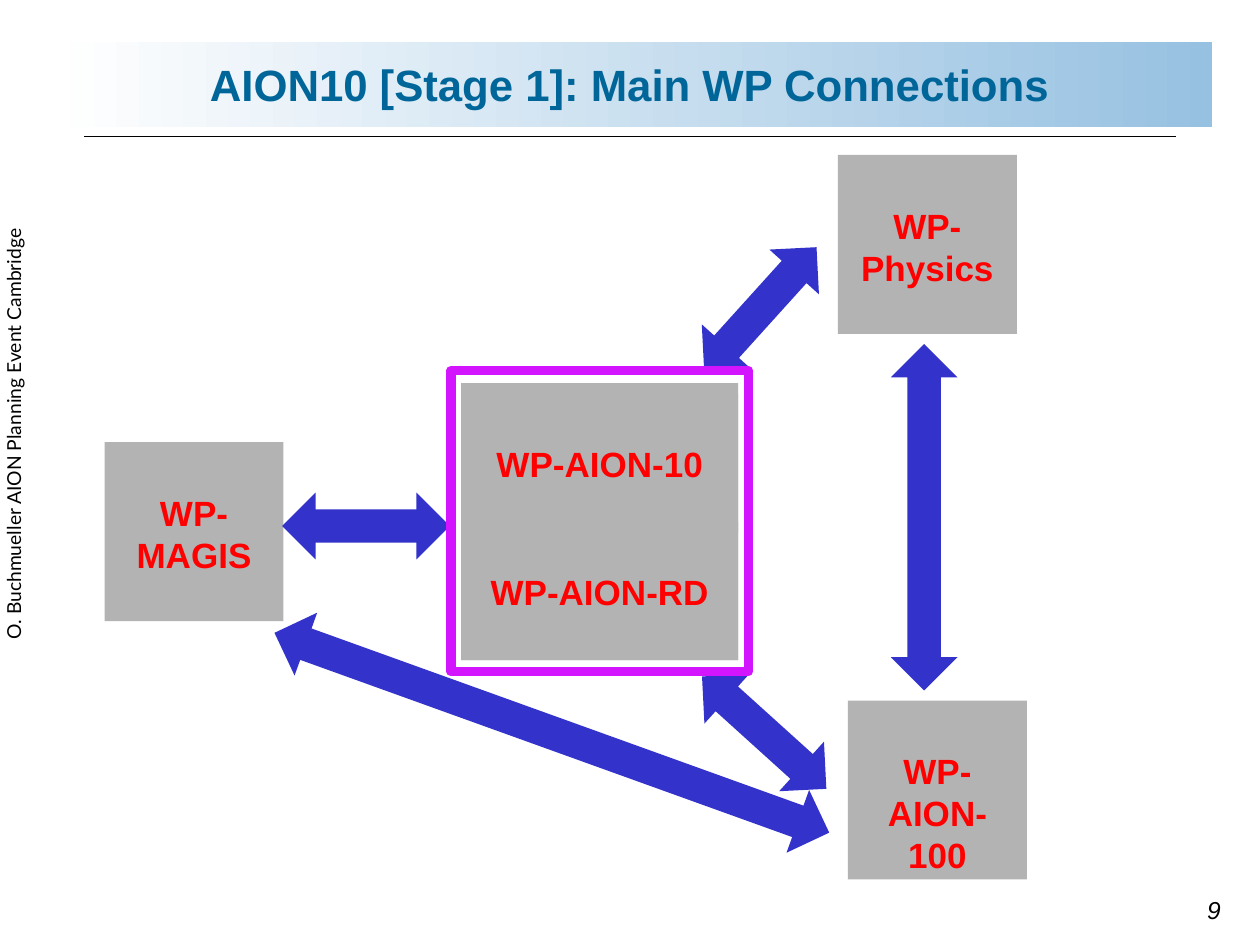
from dataclasses import dataclass

from lxml.etree import SubElement
from pptx import Presentation
from pptx.dml.color import RGBColor
from pptx.enum.shapes import MSO_CONNECTOR, MSO_SHAPE
from pptx.enum.text import MSO_ANCHOR, MSO_AUTO_SIZE, PP_ALIGN
from pptx.oxml.ns import qn
from pptx.util import Inches, Pt


@dataclass(frozen=True)
class Theme:
    font: str = "Arial"
    side_font: str = "Lato"
    title_color: str = "006699"
    label_color: str = "FF0000"
    text_color: str = "000000"
    bar_start: str = "FFFFFF"
    bar_end: str = "97C1E1"
    box_fill: str = "B3B3B3"
    arrow_fill: str = "3333CC"
    frame_line: str = "D315FF"
    title_size: float = 25
    label_size: float = 20
    number_size: float = 14
    side_size: float = 11


THEME = Theme()
COLUMNS, ROWS = 100, 75  # square grid cells over the whole slide
SLIDE_WIDTH, SLIDE_HEIGHT = Inches(10), Inches(7.5)
SQUARE = 14.2            # side of an outer work package
CORE = 22                # side of the central work package
ARROW_HEIGHT = 5.3

# Left column, top row and lines of each outer work package
PACKAGES = [
    (66.5, 12.3, ["WP-Physics"]),
    (67.3, 55.6, ["WP-AION-", "100"]),
    (8.3, 35.1, ["WP-MAGIS"]),
]
# Centre column, centre row, length and rotation of each arrow
ARROWS = [
    (60.35, 24.55, 13.3, 312.1),
    (60.65, 58.15, 13.3, 42.1),
    (29.05, 41.75, 13.3, 0),
    (73.35, 41.05, 27.5, 270),
    (43.8, 58.15, 46.8, 199.8),
]


def grid(left, top, width, height):
    """Turn columns and rows into slide lengths."""
    column, row = SLIDE_WIDTH / COLUMNS, SLIDE_HEIGHT / ROWS
    return (round(left * column), round(top * row),
            round(width * column), round(height * row))


def apply(target, values):
    for name, value in values.items():
        setattr(target, name, value)


def write(box, lines, font, color, align=PP_ALIGN.LEFT,
          anchor=MSO_ANCHOR.TOP, insets=(0.09, 0.04, 0.09, 0.04)):
    """Fill a box with one paragraph per line; insets run left, top, right, bottom."""
    frame = box.text_frame
    apply(frame, {"word_wrap": True, "auto_size": MSO_AUTO_SIZE.NONE,
                  "vertical_anchor": anchor})
    sides = ("margin_left", "margin_top", "margin_right", "margin_bottom")
    apply(frame, dict(zip(sides, map(Inches, insets))))
    for index, line in enumerate(lines):
        para = frame.paragraphs[0] if index == 0 else frame.add_paragraph()
        para.alignment = align
        span = para.add_run()
        span.text = line
        apply(span.font, font)
        span.font.color.rgb = RGBColor.from_string(color)


def add_block(page, kind, place, fill=None):
    block = page.shapes.add_shape(kind, *grid(*place))
    block.shadow.inherit = False
    block.line.fill.background()
    if fill:
        block.fill.solid()
        block.fill.fore_color.rgb = RGBColor.from_string(fill)
    else:
        block.fill.background()
    return block


def add_package(page, place, lines):
    box = add_block(page, MSO_SHAPE.RECTANGLE, place, THEME.box_fill)
    write(box, lines,
          {"name": THEME.font, "size": Pt(THEME.label_size), "bold": True},
          THEME.label_color, PP_ALIGN.CENTER, insets=(0.1, 0.39, 0.1, 0.05))


def add_arrow(page, center_column, center_row, length, rotation):
    place = (center_column - length / 2, center_row - ARROW_HEIGHT / 2,
             length, ARROW_HEIGHT)
    arrow = add_block(page, MSO_SHAPE.LEFT_RIGHT_ARROW, place, THEME.arrow_fill)
    arrow.rotation = rotation


def add_title_bar(page, text):
    bar = add_block(page, MSO_SHAPE.RECTANGLE, (3.9, 3.3, 92.3, 6.8))
    bar.fill.gradient()
    bar.fill.gradient_angle = 0
    for stop, color in zip(bar.fill.gradient_stops,
                           (THEME.bar_start, THEME.bar_end)):
        stop.color.rgb = RGBColor.from_string(color)

    left, top, width, _ = grid(6.7, 10.8, 86.6, 0)
    rule = page.shapes.add_connector(MSO_CONNECTOR.STRAIGHT,
                                     left, top, left + width, top)
    rule.line.width = Pt(0.25)
    rule.line.color.rgb = RGBColor.from_string(THEME.text_color)
    SubElement(rule._element.spPr, qn("a:effectLst"))

    title = page.shapes.title
    page.shapes._spTree.append(title._element)  # bring in front of the bar
    apply(title, dict(zip(("left", "top", "width", "height"),
                          grid(6.1, 4.2, 87.7, 5))))
    write(title, [text],
          {"name": THEME.font, "size": Pt(THEME.title_size), "bold": True},
          THEME.title_color, PP_ALIGN.CENTER, MSO_ANCHOR.MIDDLE)


def add_margin_texts(page, event, number):
    side = page.shapes.add_textbox(*grid(-17.3, 30, 39.4, 5.5))
    side.rotation = 270
    write(side, [event],
          {"name": THEME.side_font, "size": Pt(THEME.side_size)},
          THEME.text_color, insets=(0.17, 0.05, 0.09, 0.04))
    corner = page.shapes.add_textbox(*grid(94.9, 70.6, 5.1, 3.8))
    write(corner, [number],
          {"name": THEME.font, "size": Pt(THEME.number_size), "italic": True},
          THEME.text_color)


def main():
    deck = Presentation()
    apply(deck, {"slide_width": SLIDE_WIDTH, "slide_height": SLIDE_HEIGHT})
    page = deck.slides.add_slide(deck.slide_layouts[5])

    # Header and margins
    add_title_bar(page, "AION10 [Stage 1]: Main WP Connections")
    add_margin_texts(page, "O. Buchmueller AION Planning Event Cambridge", "9")

    # Work packages and the arrows between them
    core_left, core_top = 36.6, 30.4
    add_block(page, MSO_SHAPE.RECTANGLE, (core_left, core_top, CORE, CORE),
              THEME.box_fill)
    for left, top, lines in PACKAGES:
        add_package(page, (left, top, SQUARE, SQUARE), lines)
    for arrow in ARROWS:
        add_arrow(page, *arrow)

    # Central pair inside its frame
    half = CORE / 2
    for top, label in ((core_top + 0.8, "WP-AION-10"),
                       (core_top + half, "WP-AION-RD")):
        add_package(page, (core_left, top, CORE, half), [label])
    frame = add_block(page, MSO_SHAPE.RECTANGLE, (35.8, 29.4, 23.6, 23.9))
    frame.line.color.rgb = RGBColor.from_string(THEME.frame_line)
    frame.line.width = Pt(5.25)

    deck.save("out.pptx")


if __name__ == "__main__":
    main()
